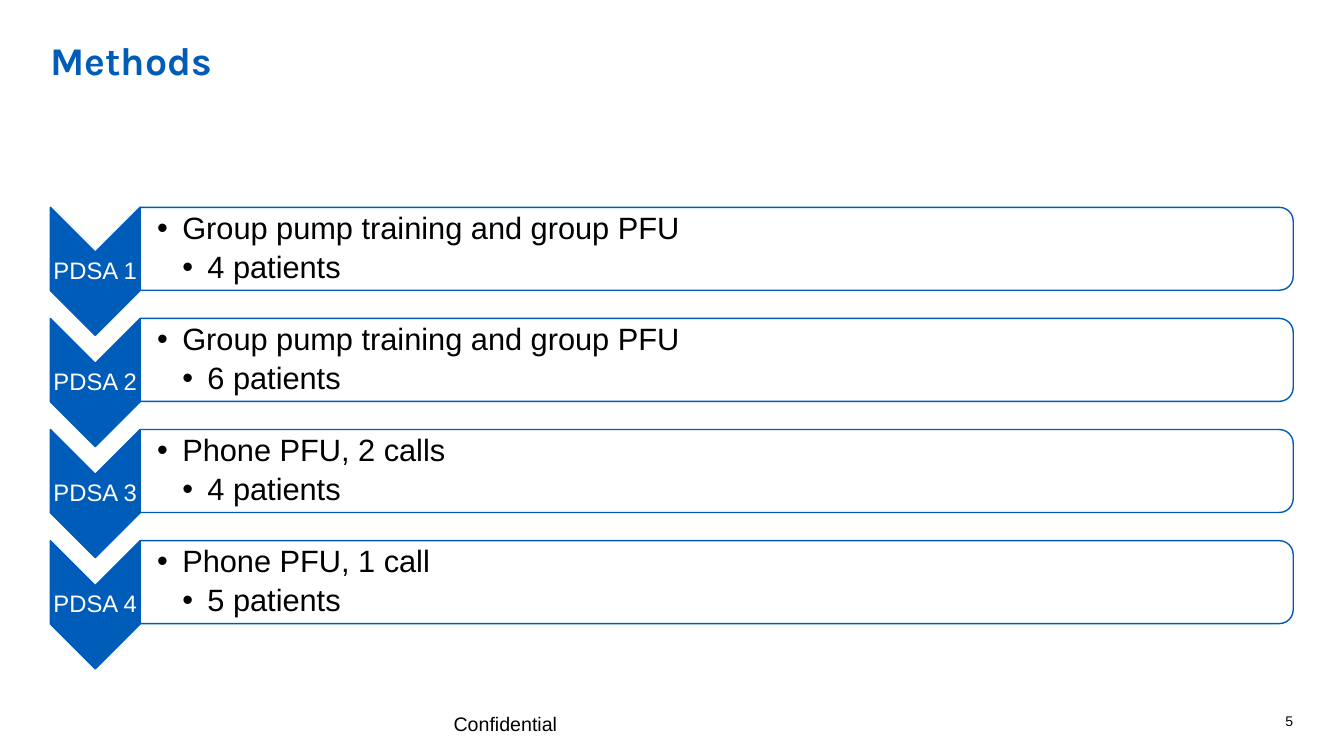
from lxml.etree import SubElement
from pptx import Presentation
from pptx.dml.color import RGBColor
from pptx.enum.shapes import MSO_SHAPE as SHAPE
from pptx.enum.text import MSO_ANCHOR as ANCHOR, MSO_AUTO_SIZE as AUTO, PP_ALIGN as ALIGN
from pptx.oxml.ns import qn
from pptx.util import Cm, Pt

TITLE = "Methods"
FOOTER = "Confidential"
PAGE = "5"
CYCLES = [
    ("PDSA 1", "Group pump training and group PFU", "4 patients"),
    ("PDSA 2", "Group pump training and group PFU", "6 patients"),
    ("PDSA 3", "Phone PFU, 2 calls", "4 patients"),
    ("PDSA 4", "Phone PFU, 1 call", "5 patients"),
]
COLORS = {"blue": "005CB9", "white": "FFFFFF", "black": "000000"}

# Lengths in cm
LEFT = 1.27
PITCH = 2.8
CHEVRON_W, CHEVRON_H, CHEVRON_MID = 2.26, 3.23, 6.84
BAR_W, BAR_H, BAR_MID = 29.06, 2.09, 6.27
LABEL_H, LIST_W, LIST_H = 0.97, 28.96, 1.88
INDENT = 0.635


def rgb(name):
    return RGBColor.from_string(COLORS[name])


def add_rotated(kind, left, mid, width, height, fill, alpha=None):
    """Add a shape turned by 90 degrees; width and height are as seen."""
    x, y = left + (width - height) / 2, mid - width / 2
    sp = s.shapes.add_shape(kind, Cm(x), Cm(y), Cm(height), Cm(width))
    sp.rotation = 90
    sp.shadow.inherit = False
    sp.fill.solid()
    sp.fill.fore_color.rgb = rgb(fill)
    sp.line.color.rgb = rgb("blue")
    sp.line.width = Pt(1)
    if alpha:
        color = sp._element.spPr.find(qn("a:solidFill")).find(qn("a:srgbClr"))
        SubElement(color, qn("a:alpha"), val=str(alpha * 1000))


def add_box(left, top, width, height):
    return s.shapes.add_textbox(Cm(left), Cm(top), Cm(width), Cm(height))


def write(sp, *lines, size, color="black", font="Arial", bold=False, align=ALIGN.LEFT,
          anchor=ANCHOR.TOP, insets=(0, 0, 0, 0), spacing=1.0, after=0, bullets=False):
    tf = sp.text_frame
    tf.word_wrap = True
    tf.auto_size = AUTO.NONE
    tf.vertical_anchor = anchor
    tf.margin_left, tf.margin_top, tf.margin_right, tf.margin_bottom = map(Cm, insets)
    for level, text in enumerate(lines):
        p = tf.add_paragraph() if level else tf.paragraphs[0]
        p.alignment = align
        p.line_spacing = spacing
        p.space_after = Pt(after)
        if bullets:
            p.level = level
            pPr = p._p.get_or_add_pPr()
            pPr.set("marL", str(Cm(INDENT * (level + 1))))
            pPr.set("indent", str(-Cm(INDENT)))
            SubElement(pPr, qn("a:buFont"), typeface="Arial")
            SubElement(pPr, qn("a:buChar"), char="•")
        r = p.add_run()
        r.text = text
        r.font.name = font
        r.font.size = Pt(size)
        r.font.bold = bold
        r.font.color.rgb = rgb(color)


prs = Presentation()
prs.slide_width, prs.slide_height = Cm(33.87), Cm(19.05)
s = prs.slides.add_slide(prs.slide_layouts[5])

title = s.shapes.title
title.left, title.top, title.width, title.height = Cm(LEFT), Cm(0.91), Cm(20.62), Cm(2.57)
write(title, TITLE, size=28, color="blue", font="Karla", bold=True)

bar_left = LEFT + CHEVRON_W
for i, (label, *items) in enumerate(CYCLES):
    chevron_mid, bar_mid = CHEVRON_MID + i * PITCH, BAR_MID + i * PITCH
    add_rotated(SHAPE.CHEVRON, LEFT, chevron_mid, CHEVRON_W, CHEVRON_H, "blue")
    write(add_box(LEFT, chevron_mid - LABEL_H / 2, CHEVRON_W, LABEL_H), label,
          size=17, color="white", align=ALIGN.CENTER, anchor=ANCHOR.MIDDLE,
          insets=(0.03,) * 4, spacing=0.9)
    add_rotated(SHAPE.ROUND_2_SAME_RECTANGLE, bar_left, bar_mid, BAR_W, BAR_H, "white", alpha=90)
    write(add_box(bar_left, bar_mid - LIST_H / 2, LIST_W, LIST_H), *items,
          size=22, anchor=ANCHOR.MIDDLE, insets=(0.43, 0.04, 0.04, 0.04),
          spacing=0.9, after=4, bullets=True)

write(add_box(11.18, 17.8, 10.72, 0.58), FOOTER, size=14, insets=(0.25, 0.13, 0.25, 0.13))
write(add_box(31.34, 17.98, 1.25, 0.41), PAGE, size=10, align=ALIGN.RIGHT, anchor=ANCHOR.BOTTOM)

prs.save("out.pptx")
